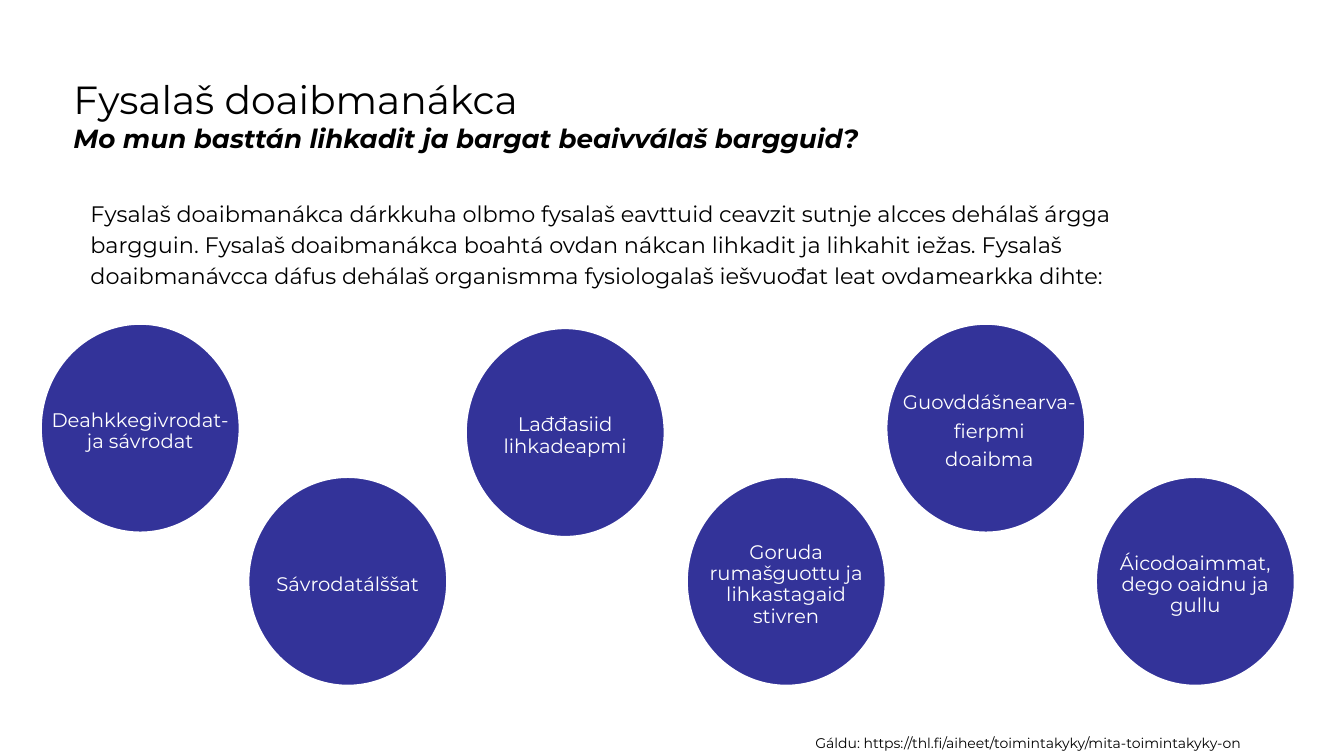
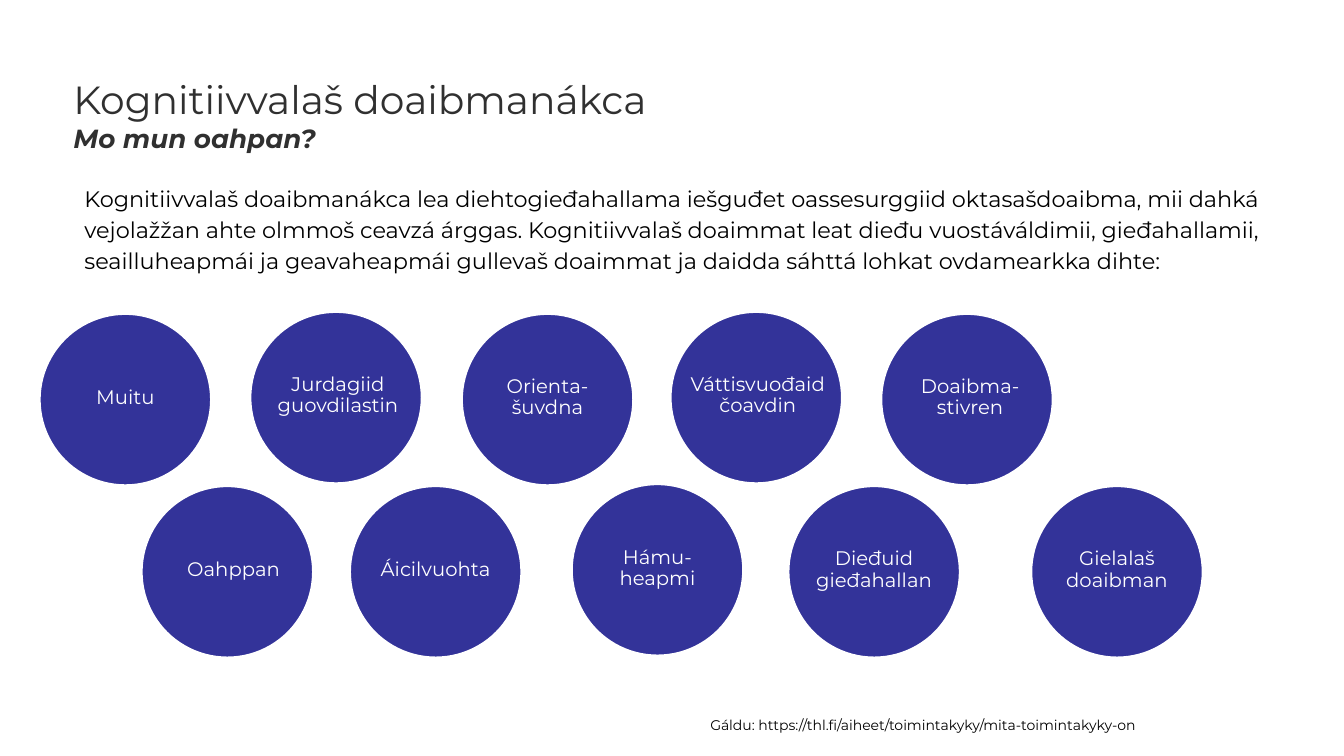
from lxml import etree
from pptx import Presentation
from pptx import util as u
from pptx.dml.color import RGBColor
from pptx.enum import shapes, text
from pptx.oxml.ns import qn

Cm, Pt = u.Cm, u.Pt

COLORS = {"circle": "333399", "white": "FFFFFF", "black": "000000", "grey": "303030"}
FONT = "Montserrat"
SOURCE = "Gáldu: https://thl.fi/aiheet/toimintakyky/mita-toimintakyky-on"
TITLE_BOX = (1.6, 1.65, 30.68, 2.13)
SOURCE_SIZE = (11.5, 0.66)

# Circles: (left, top, label, text shift to the right); \v breaks a line, \n a paragraph.
SLIDES = [
    {
        "title": "Fysalaš doaibmanákca",
        "question": "Mo mun basttán lihkadit ja bargat beaivválaš bargguid?",
        "title_color": "black",
        "body": "Fysalaš doaibmanákca dárkkuha olbmo fysalaš eavttuid ceavzit sutnje "
                "alcces dehálaš árgga bargguin. Fysalaš doaibmanákca boahtá ovdan nákcan "
                "lihkadit ja lihkahit iežas. Fysalaš doaibmanávcca dáfus dehálaš organismma "
                "fysiologalaš iešvuođat leat ovdamearkka dihte:",
        "body_box": (1.6, 4.7, 27.48, 3.4),
        "circle_size": (5.03, 5.28),
        "text_drop": 0.09,
        "circles": [
            (1.02, 8.15, "Deahkkegivrodat-\vja sávrodat", 0),
            (6.25, 12.01, "Sávrodatálššat", 0),
            (11.73, 8.26, "Lađđasiid\vlihkadeapmi", 0),
            (17.3, 12.01, "Goruda\vrumašguottu ja\vlihkastagaid\vstivren", 0),
            (22.33, 8.15, "Guovddášnearva-\nfierpmi\ndoaibma", 0.09),
            (27.61, 12.01, "Áicodoaimmat,\vdego oaidnu ja\vgullu", 0),
        ],
        "source_at": (20.3, 18.39),
    },
    {
        "title": "Kognitiivvalaš doaibmanákca",
        "question": "Mo mun oahpan?",
        "title_color": "grey",
        "body": "Kognitiivvalaš doaibmanákca lea diehtogieđahallama iešguđet oassesurggiid "
                "oktasašdoaibma, mii dahká vejolažžan ahte olmmoš ceavzá árggas. "
                "Kognitiivvalaš doaimmat leat dieđu vuostáváldimii, gieđahallamii, "
                "seailluheapmái ja geavaheapmái gullevaš doaimmat ja daidda sáhttá lohkat "
                "ovdamearkka dihte:",
        "body_box": (1.45, 4.32, 30.68, 3.4),
        "circle_size": (4.34, 4.34),
        "text_drop": -0.04,
        "circles": [
            (0.99, 7.9, "Muitu", 0),
            (6.3, 7.85, "Jurdagiid\vguovdilastin", 0.05),
            (11.63, 7.9, "Orienta-\všuvdna", 0),
            (16.89, 7.85, "Váttisvuođaid\včoavdin", 0.04),
            (22.2, 7.9, "Doaibma-\vstivren", 0.08),
            (3.56, 12.24, "Oahppan", 0.16),
            (8.81, 12.24, "Áicilvuohta", 0),
            (14.4, 12.19, "Hámu-\vheapmi", 0),
            (19.86, 12.24, "Dieđuid\vgieđahallan", 0),
            (25.98, 12.24, "Gielalaš\vdoaibman", 0),
        ],
        "source_at": (17.65, 17.93),
    },
]


def style(r, size, color, **attrs):
    for name, value in {"name": FONT, "size": Pt(size), **attrs}.items():
        setattr(r.font, name, value)
    r.font.color.rgb = RGBColor.from_string(COLORS[color])


def set_margins(tf, left, top, right, bottom):
    sides = {"left": left, "top": top, "right": right, "bottom": bottom}
    for side, value in sides.items():
        setattr(tf, f"margin_{side}", Cm(value))


def add_box(s, box, margins, wrap=True):
    tf = s.shapes.add_textbox(*map(Cm, box)).text_frame
    tf.word_wrap = wrap
    set_margins(tf, *margins)
    return tf


def add_title(s, title, question, color):
    p = add_box(s, TITLE_BOX, (0.25,) * 4).paragraphs[0]
    r = p.add_run()
    r.text = title
    style(r, 28, color)
    p.add_line_break()
    r = p.add_run()
    r.text = question
    style(r, 18.7, color, bold=True, italic=True)


def add_text(s, content, box, margins, size, spacing=1.0, wrap=True):
    p = add_box(s, box, margins, wrap).paragraphs[0]
    p.line_spacing = spacing
    r = p.add_run()
    r.text = content
    style(r, size, "black")


def add_circle(s, box, label, shift, drop):
    """Draw a labelled circle, its text moved right by shift and down by drop."""
    sp = s.shapes.add_shape(shapes.MSO_SHAPE.OVAL, *map(Cm, box))
    sp.shadow.inherit = False
    sp.fill.solid()
    sp.fill.fore_color.rgb = RGBColor.from_string(COLORS["circle"])
    sp.line.color.rgb = RGBColor.from_string(COLORS["white"])
    sp.line.width = Pt(2)
    tf = sp.text_frame
    tf.word_wrap = False
    tf.vertical_anchor = text.MSO_ANCHOR.MIDDLE
    set_margins(tf, 2 * shift, max(2 * drop, 0), 0, max(-2 * drop, 0))
    tf.text = label
    for p in tf.paragraphs:
        p.alignment = text.PP_ALIGN.CENTER
        p.line_spacing = 0.9
        p.space_after = Pt(5)
        for br in p._p.findall(qn("a:br")):
            etree.SubElement(br, qn("a:rPr"), sz="1400")
        for r in p.runs:
            style(r, 14, "white")


def main():
    prs = Presentation()
    prs.slide_width, prs.slide_height = Cm(33.87), Cm(19.05)
    for data in SLIDES:
        s = prs.slides.add_slide(prs.slide_layouts[6])
        add_title(s, data["title"], data["question"], data["title_color"])
        add_text(s, data["body"], data["body_box"], (0.68, 0.25, 0.25, 0.25), 16, 1.15)
        for left, top, label, shift in data["circles"]:
            add_circle(s, (left, top, *data["circle_size"]), label, shift, data["text_drop"])
        add_text(s, SOURCE, data["source_at"] + SOURCE_SIZE, (0.25, 0.13, 0.25, 0), 10, wrap=False)
    prs.save("out.pptx")


if __name__ == "__main__":
    main()
